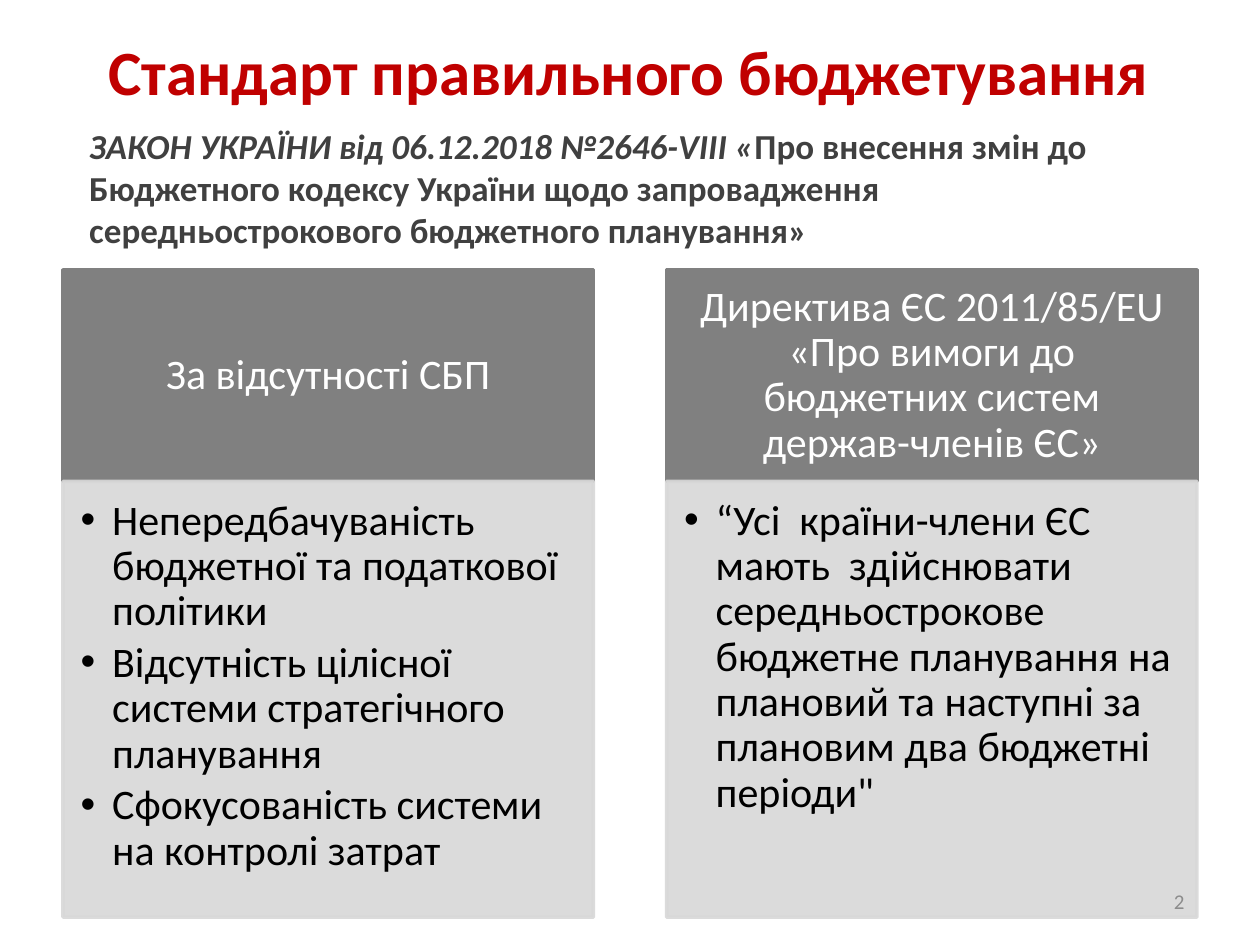
from lxml.etree import SubElement
from pptx import Presentation
from pptx.dml.color import RGBColor
from pptx.enum.shapes import MSO_SHAPE
from pptx.enum.text import MSO_ANCHOR, PP_ALIGN
from pptx.oxml.ns import qn
from pptx.util import Inches, Pt

COLUMNS = [
    ("За відсутності СБП",
     ["Непередбачуваність бюджетної та податкової політики",
      "Відсутність цілісної системи стратегічного планування",
      "Сфокусованість системи на контролі затрат"]),
    ("Директива ЄС 2011/85/EU «Про вимоги до бюджетних систем держав-членів ЄС»",
     ["“Усі  країни-члени ЄС мають  здійснювати середньострокове бюджетне "
      "планування на плановий та наступні за плановим два бюджетні  періоди\""]),
]
LEFT, WIDTH, STEP = 0.5, 4.21, 4.79
HEAD_TOP, HEAD_HEIGHT, BODY_HEIGHT = 2.14, 1.68, 3.46


def color(value):
    return RGBColor.from_string(value)


def add_text(para, text, size=24, ink="000000", bold=False, italic=False):
    span = para.add_run()
    span.text = text
    font = span.font
    font.name, font.size = "Calibri", Pt(size)
    font.bold, font.italic = bold, italic
    font.color.rgb = color(ink)


def add_bullet(para):
    properties = para._p.get_or_add_pPr()
    properties.set("marL", str(Inches(0.25)))
    properties.set("indent", str(-Inches(0.25)))
    SubElement(properties, qn("a:buFont"), typeface="Arial")
    SubElement(properties, qn("a:buChar"), char="•")


def set_opacity(fill_format, percent):
    for tint in fill_format.iter(qn("a:srgbClr")):
        SubElement(tint, qn("a:alpha"), val=str(percent * 1000))


class SlideBuilder:
    accent, gray, pale = "C00000", "808080", "D8D8D8"

    def __init__(self, deck):
        self.page = deck.slides.add_slide(deck.slide_layouts[5])

    def place(self, box, left, top, width, height):
        box.left, box.top = Inches(left), Inches(top)
        box.width, box.height = Inches(width), Inches(height)

    def title(self, text, *area):
        box = self.page.shapes.title
        self.place(box, *area)
        box.text_frame.vertical_anchor = MSO_ANCHOR.MIDDLE
        para = box.text_frame.paragraphs[0]
        para.alignment = PP_ALIGN.CENTER
        add_text(para, text, size=36, ink=self.accent, bold=True)

    def text(self, spans, *area, align=PP_ALIGN.LEFT, anchor=MSO_ANCHOR.TOP):
        box = self.page.shapes.add_textbox(*map(Inches, area))
        frame = box.text_frame
        frame.word_wrap = True
        frame.vertical_anchor = anchor
        para = frame.paragraphs[0]
        para.alignment = align
        for words, style in spans:
            add_text(para, words, **style)

    def panel(self, fill, insets, anchor, *area):
        box = self.page.shapes.add_shape(MSO_SHAPE.RECTANGLE, *map(Inches, area))
        box.shadow.inherit = False
        box.fill.solid()
        box.fill.fore_color.rgb = color(fill)
        box.line.color.rgb = color(fill)
        box.line.width = Pt(2)
        frame = box.text_frame
        frame.word_wrap = True
        frame.vertical_anchor = anchor
        (frame.margin_left, frame.margin_top,
         frame.margin_right, frame.margin_bottom) = map(Inches, insets)
        return box

    def heading(self, text, *area):
        box = self.panel(self.gray, (0.19, 0.11, 0.19, 0.11), MSO_ANCHOR.MIDDLE, *area)
        para = box.text_frame.paragraphs[0]
        para.alignment = PP_ALIGN.CENTER
        para.line_spacing = 0.9
        add_text(para, text, ink="FFFFFF")

    def bullets(self, items, *area):
        box = self.panel(self.pale, (0.14, 0.14, 0.19, 0.21), MSO_ANCHOR.TOP, *area)
        set_opacity(box._element.spPr, 90)
        frame = box.text_frame
        for index, item in enumerate(items):
            para = frame.add_paragraph() if index else frame.paragraphs[0]
            add_bullet(para)
            para.alignment = PP_ALIGN.LEFT
            para.line_spacing = 0.9
            para.space_after = Pt(3.6)
            add_text(para, item)


def main():
    deck = Presentation()
    deck.slide_width, deck.slide_height = Inches(10), Inches(7.5)
    slide = SlideBuilder(deck)

    # Title
    slide.title("Стандарт правильного бюджетування", 0.49, 0.21, 9, 0.69)

    # Two columns: heading above bullets
    for index, (heading, items) in enumerate(COLUMNS):
        left = LEFT + index * STEP
        slide.heading(heading, left, HEAD_TOP, WIDTH, HEAD_HEIGHT)
        slide.bullets(items, left, HEAD_TOP + HEAD_HEIGHT, WIDTH, BODY_HEIGHT)

    # Law reference
    law = {"size": 20, "ink": "404040", "bold": True}
    slide.text([("ЗАКОН УКРАЇНИ від 06.12.2018 №2646-VIII «", {**law, "italic": True}),
                ("Про внесення змін до Бюджетного кодексу України щодо запровадження "
                 "середньострокового бюджетного планування»", law)],
               0.61, 0.94, 8.88, 1.11)

    # Page number
    slide.text([("2", {"size": 12, "ink": "8C8C8C"})], 7.17, 6.95, 2.33, 0.4,
               align=PP_ALIGN.RIGHT, anchor=MSO_ANCHOR.MIDDLE)

    deck.save("out.pptx")


if __name__ == "__main__":
    main()
